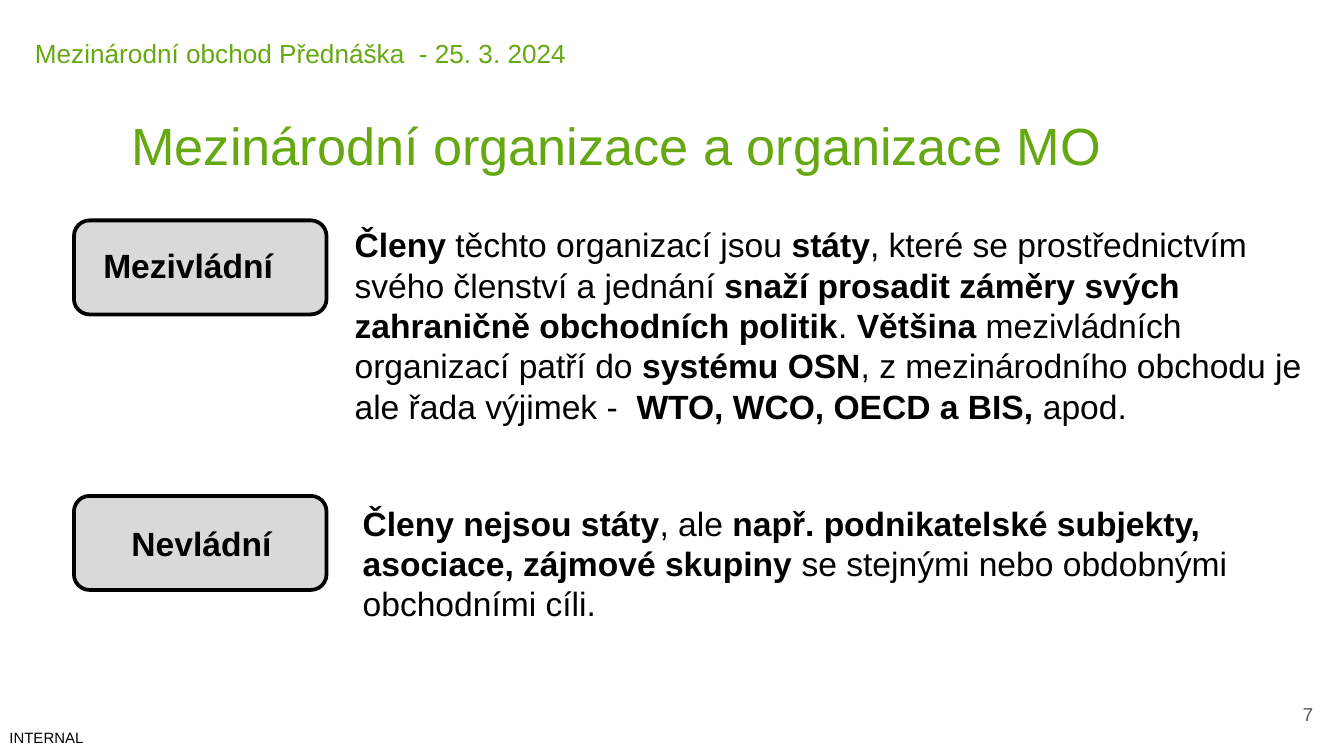
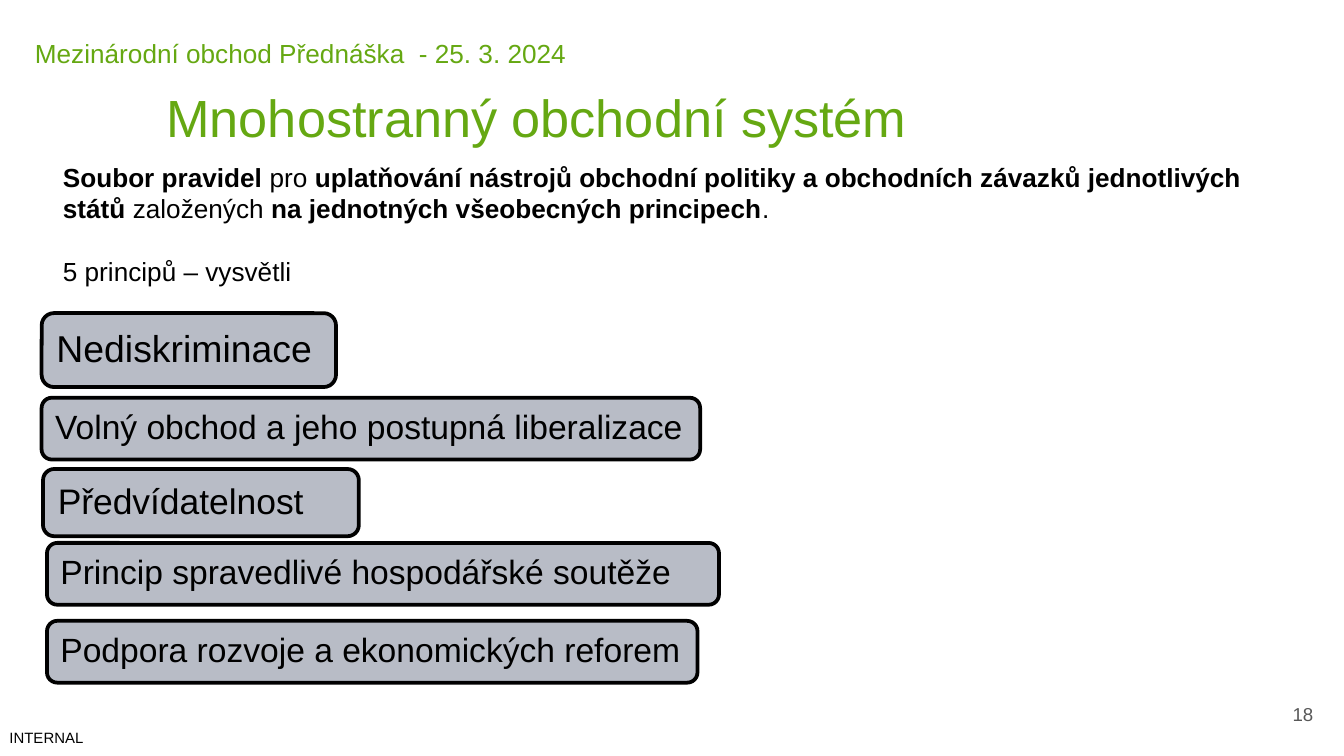
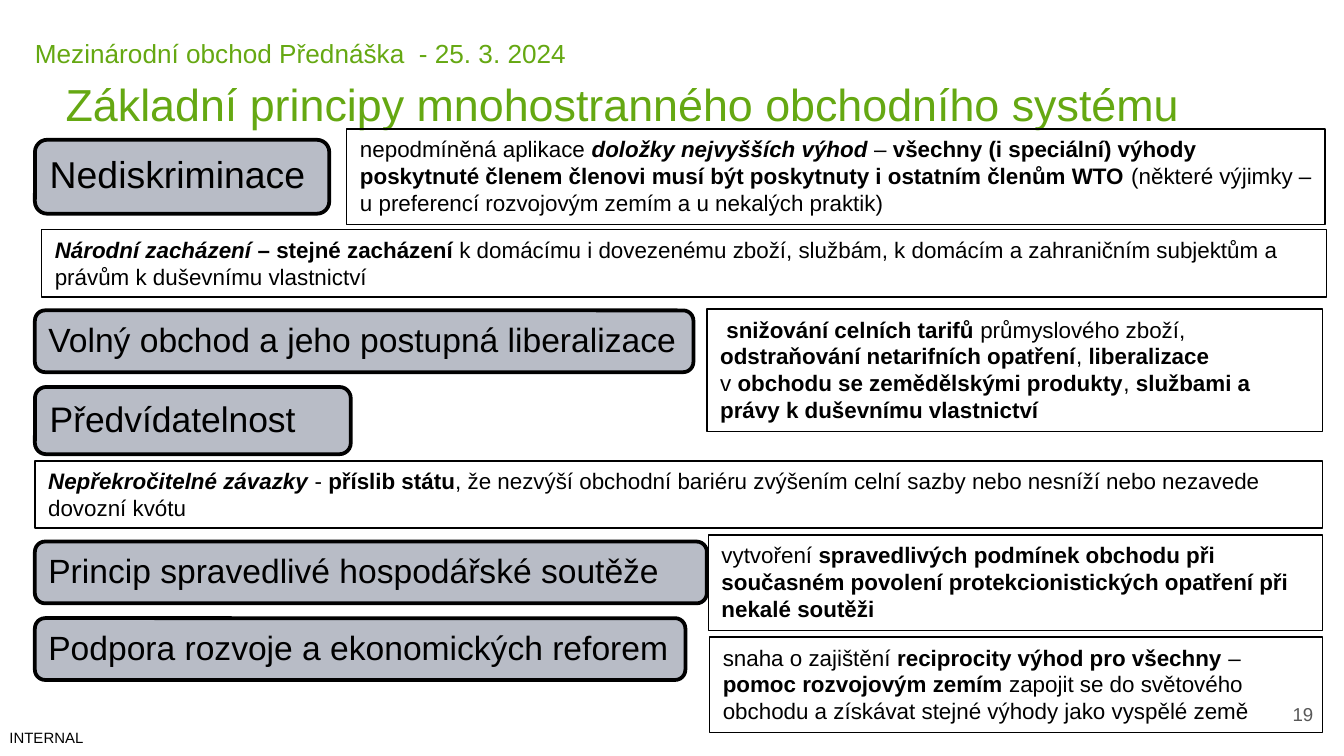
from pptx import Presentation
from pptx.dml.color import RGBColor
from pptx.enum.shapes import MSO_SHAPE
from pptx.enum.text import MSO_ANCHOR, MSO_AUTO_SIZE, PP_ALIGN
from pptx.util import Pt

PX = 9144
FONT = "Arial"
HARD_SPACE = chr(160)
COLORS = {
    "green": "65A812",
    "black": "000000",
    "page": "585858",
    "gray": "D9D9D9",
    "steel": "B8BCC6",
}
ROUNDED = MSO_SHAPE.ROUNDED_RECTANGLE
RECTANGLE = MSO_SHAPE.RECTANGLE
TOP = MSO_ANCHOR.TOP
MIDDLE = MSO_ANCHOR.MIDDLE
LEFT = PP_ALIGN.LEFT
RIGHT = PP_ALIGN.RIGHT
GROW = MSO_AUTO_SIZE.SHAPE_TO_FIT_TEXT
FIXED = MSO_AUTO_SIZE.NONE


def add_box(shapes, box, kind, line_width, fill=None):
    shape = shapes.add_shape(kind, *[value * PX for value in box])
    shape.shadow.inherit = False
    if fill:
        shape.fill.solid()
        shape.fill.fore_color.rgb = RGBColor.from_string(COLORS[fill])
    else:
        shape.fill.background()
    shape.line.color.rgb = RGBColor.from_string(COLORS["black"])
    shape.line.width = Pt(line_width)
    return shape


def add_text(shapes, text, box=None, shape=None, size=18, color="black",
             anchor=TOP, align=LEFT, insets=(10, 5, 10, 5), wrap=True,
             fit=GROW, line_spacing=None, gap=0, hanging=None):
    shape = shape or shapes.add_textbox(*[value * PX for value in box])
    frame = shape.text_frame
    frame.word_wrap = wrap
    frame.auto_size = fit
    frame.vertical_anchor = anchor
    (frame.margin_left, frame.margin_top,
     frame.margin_right, frame.margin_bottom) = [value * PX for value in insets]
    for number, line in enumerate(text.replace("~", HARD_SPACE).split("\n")):
        paragraph = frame.add_paragraph() if number else frame.paragraphs[0]
        paragraph.alignment = align
        if line_spacing:
            paragraph.line_spacing = line_spacing
        if number:
            paragraph.space_before = Pt(gap)
        if hanging:
            properties = paragraph._p.get_or_add_pPr()
            properties.set("marL", str(hanging[0] * PX))
            properties.set("indent", str(hanging[1] * PX))
        for index, part in enumerate(line.split("*")):
            if part:
                run = paragraph.add_run()
                run.text = part.lstrip("_")
                run.font.name = FONT
                run.font.size = Pt(size)
                run.font.bold = index % 2 == 1
                run.font.italic = part.startswith("_")
                run.font.color.rgb = RGBColor.from_string(COLORS[color])


presentation = Presentation()
presentation.slide_width = 1000 * PX
presentation.slide_height = presentation.slide_width * 9 // 16

titles = [
    ("7", "Mezinárodní organizace a~organizace MO", (88, 79, 801, 57), 28),
    ("18", "Mnohostranný obchodní systém", (114, 58, 599, 57), 28),
    ("19", "Základní principy mnohostranného obchodního systému",
     (39, 52, 974, 50), 24),
]
canvases = []
for page, title, title_box, title_size in titles:
    slide = presentation.slides.add_slide(presentation.slide_layouts[6])
    shapes = slide.shapes
    add_text(shapes, "INTERNAL", (7, 542, 58, 13), size=8, insets=(0, 0, 0, 0))
    add_text(shapes, page, (950, 514, 37, 35), size=10, color="page",
             anchor=MIDDLE, align=RIGHT, insets=(10, 10, 10, 10), wrap=False)
    add_text(shapes, title, title_box, size=title_size, color="green",
             anchor=MIDDLE)
    add_text(shapes, "Mezinárodní obchod Přednáška  - 25. 3. 2024",
             (13, 28, 827, 39), size=14, color="green",
             insets=(0, 0, 10, 10), fit=FIXED, hanging=(38, -25))
    canvases.append(shapes)
organizations, system, details = canvases

organization_types = [
    (164, "*Mezivládní*", (67, 181, 148, 37), 0.9, (254, 162, 746, 162),
     "*Členy* těchto organizací jsou *státy*, které se prostřednictvím svého "
     "členství a jednání *snaží prosadit záměry svých zahraničně obchodních "
     "politik*. *Většina* mezivládních organizací patří do *systému OSN*, "
     "z mezinárodního obchodu je ale řada výjimek -  "
     "*WTO, WCO, OECD a BIS, *apod."),
    (369, "*Nevládní*", (88, 384, 125, 40), None, (260, 369, 711, 101),
     "*Členy nejsou státy*, ale *např. podnikatelské subjekty, asociace, "
     "zájmové skupiny *se stejnými nebo obdobnými obchodními cíli."),
]
for top, name, name_box, spacing, description_box, description in organization_types:
    add_box(organizations, (55, top, 188, 70), ROUNDED, 2, "gray")
    add_text(organizations, name, name_box, wrap=False, line_spacing=spacing)
    add_text(organizations, description, description_box)

add_text(system,
         "*Soubor pravidel *pro *uplatňování nástrojů obchodní politiky a "
         "obchodních závazků jednotlivých států* založených *na jednotných "
         "všeobecných principech*.\n5 principů – vysvětli",
         (37, 115, 930, 104), size=14, gap=17)

principles = [
    ("Nediskriminace", 20, 219, 55, 8, (31, 233), (26, 104)),
    ("Volný obchod a jeho postupná liberalizace", 18, 490, 46, 7,
     (31, 296), (26, 231)),
    ("Předvídatelnost", 19, 235, 50, 8, (32, 349), (26, 288)),
    ("Princip spravedlivé hospodářské soutěže", 18, 500, 46, 7,
     (35, 404), (26, 403)),
    ("Podpora rozvoje a ekonomických reforem", 18, 484, 46, 7,
     (35, 462), (26, 460)),
]
for name, size, width, height, inset, *corners in principles:
    for shapes, (left, top) in zip((system, details), corners):
        group = shapes.add_group_shape()
        add_box(group.shapes, (left, top, width, height), ROUNDED, 2, "steel")
        add_text(group.shapes, name,
                 (left + 3, top + 2, width - 4, height - 4), size=size,
                 anchor=MIDDLE, insets=(inset,) * 4, fit=FIXED,
                 line_spacing=0.9)

explanations = [
    ((258, 96, 728, 71),
     "nepodmíněná aplikace *_doložky nejvyšších výhod *– *všechny "
     "(i speciální) výhody poskytnuté členem členovi musí být poskytnuty "
     "i ostatním členům WTO *(některé výjimky – u preferencí rozvojovým "
     "zemím a u nekalých praktik)"),
    ((31, 171, 956, 50),
     "*_Národní zacházení** – stejné zacházení* k domácímu i dovezenému "
     "zboží, službám, k domácím a zahraničním subjektům a právům "
     "k~duševnímu vlastnictví"),
    ((526, 230, 458, 91),
     " *snižování celních tarifů *průmyslového zboží, *odstraňování "
     "netarifních opatření*, *liberalizace* v~*obchodu se zemědělskými "
     "produkty*, *službami a právy k~duševnímu vlastnictví*"),
    ((26, 343, 958, 50),
     "*_Nepřekročitelné závazky* - *příslib státu*, že nezvýší obchodní "
     "bariéru zvýšením celní sazby nebo nesníží nebo nezavede dovozní kvótu"),
    ((527, 398, 457, 71),
     "vytvoření *spravedlivých podmínek obchodu při současném povolení "
     "protekcionistických opatření při nekalé soutěži*"),
    ((528, 474, 456, 71),
     "snaha o zajištění *reciprocity výhod pro všechny *– *pomoc rozvojovým "
     "zemím *zapojit se do světového obchodu a získávat stejné výhody jako "
     "vyspělé země"),
]
for box, explanation in explanations:
    frame_shape = add_box(details, box, RECTANGLE, 0.75)
    add_text(details, explanation, shape=frame_shape, size=12)

presentation.save("out.pptx")
